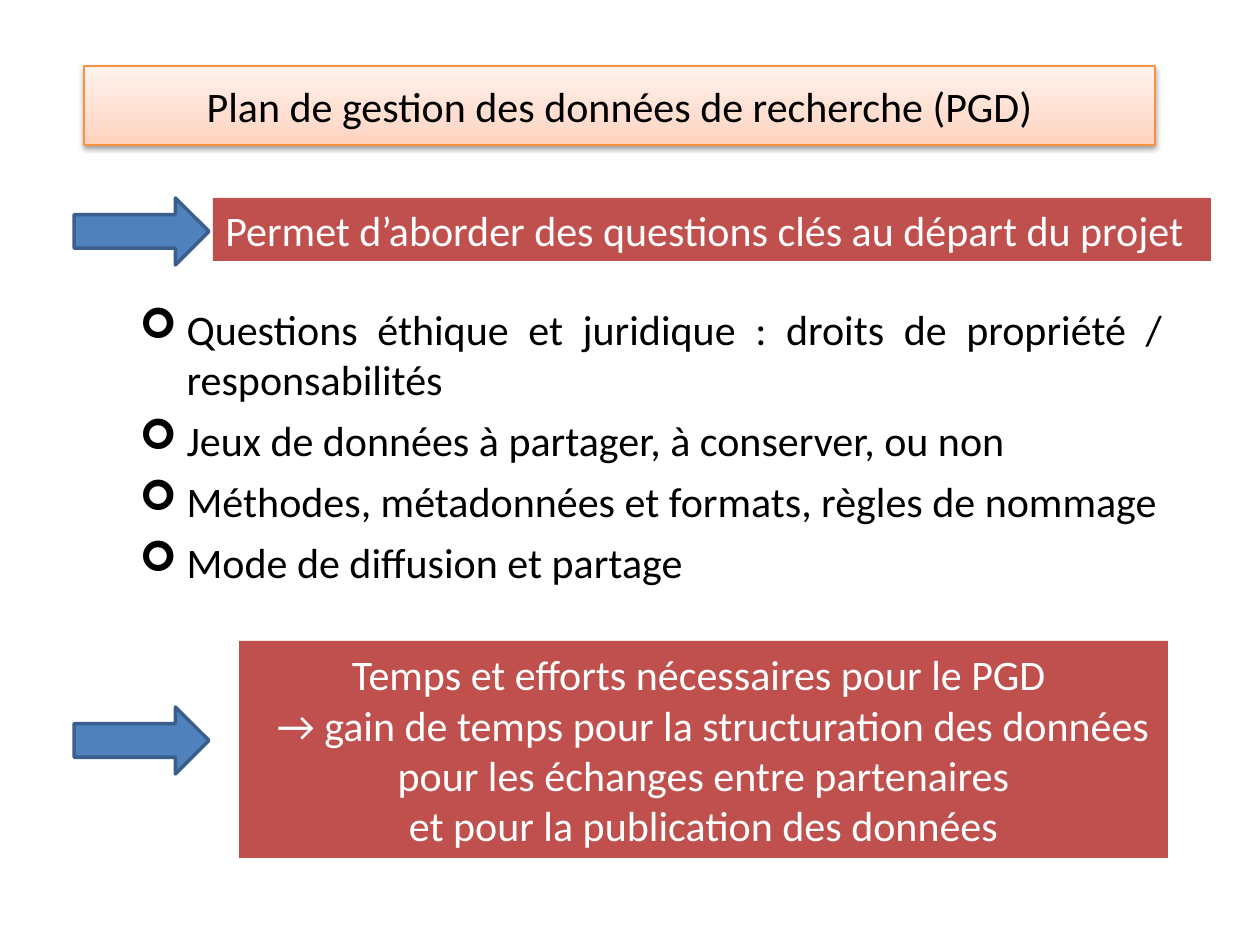
import copy
from dataclasses import dataclass

import pptx
import pptx.dml.color
import pptx.enum.dml
import pptx.enum.shapes
import pptx.enum.text
import pptx.oxml
import pptx.oxml.ns
import pptx.util

ALIGN = pptx.enum.text.PP_ALIGN
SHAPE = pptx.enum.shapes.MSO_SHAPE
qn = pptx.oxml.ns.qn
NAMESPACE = pptx.oxml.ns.nsdecls("a")


@dataclass(frozen=True)
class Theme:
    font: str = "Calibri"
    size: int = 24
    dark: str = "000000"
    light: str = "FFFFFF"
    banner: str = "C0504D"
    arrow: str = "4F81BD"
    arrow_edge: str = "3A5F8C"
    title_edge: str = "F69240"
    title_stops: tuple = ((0, "FFD2BD"), (0.35, "FFDED0"), (1, "FFF2ED"))


def px(length):
    return pptx.util.Emu(round(length * 914400 / 126))


def rgb(value):
    return pptx.dml.color.RGBColor.from_string(value)


def write(paragraph, text, *, font, size, color, align, before=0, margin=0, indent=0, bullet=None):
    run = paragraph.add_run()
    run.text = text
    run.font.name = font
    run.font.size = pptx.util.Pt(size)
    run.font.color.rgb = rgb(color)
    paragraph.alignment = align
    paragraph.space_before = pptx.util.Pt(before)
    properties = paragraph._p.get_or_add_pPr()
    properties.set("marL", str(px(margin)))
    properties.set("indent", str(px(indent)))
    if bullet:
        properties.append(pptx.oxml.parse_xml(f'<a:buFont {NAMESPACE} typeface="Wingdings"/>'))
        properties.append(pptx.oxml.parse_xml(f'<a:buChar {NAMESPACE} char="{bullet}"/>'))


class SlideBuilder:
    def __init__(self, slide, theme):
        self.slide = slide
        self.theme = theme

    def place(self, element, box):
        element.left, element.top, element.width, element.height = map(px, box)

    def fill_text(self, element, lines, color, align, margins=None, **layout):
        frame = element.text_frame
        frame.word_wrap = True
        frame.auto_size = pptx.enum.text.MSO_AUTO_SIZE.NONE
        for index, line in enumerate(lines):
            paragraph = frame.add_paragraph() if index else frame.paragraphs[0]
            if margins:
                layout["margin"] = margins[index]
            write(paragraph, line, font=self.theme.font, size=self.theme.size,
                  color=color, align=align, **layout)

    def title(self, text, box):
        heading = self.slide.shapes.title
        self.place(heading, box)
        heading.fill.gradient()
        heading.fill.gradient_angle = 90
        stop_list = heading.element.spPr.find(".//" + qn("a:gsLst"))
        stop_list.insert(1, copy.deepcopy(stop_list[0]))
        for stop, (position, color) in zip(heading.fill.gradient_stops, self.theme.title_stops):
            stop.position = position
            stop.color.rgb = rgb(color)
        heading.line.color.rgb = rgb(self.theme.title_edge)
        heading.line.width = pptx.util.Pt(0.75)
        heading.element.spPr.append(pptx.oxml.parse_xml(
            f'<a:effectLst {NAMESPACE}><a:outerShdw blurRad="39370" dist="20320" dir="5400000" '
            'rotWithShape="0"><a:srgbClr val="000000"><a:alpha val="38000"/></a:srgbClr>'
            '</a:outerShdw></a:effectLst>'))
        heading.text_frame.vertical_anchor = pptx.enum.text.MSO_ANCHOR.MIDDLE
        self.fill_text(heading, [text], self.theme.dark, ALIGN.CENTER)

    def bullets(self, lines, box):
        topics = self.slide.placeholders[1]
        self.place(topics, box)
        self.fill_text(topics, lines, self.theme.dark, ALIGN.JUSTIFY,
                       before=6, margin=110, indent=-47, bullet="➢")
        for paragraph in topics.text_frame.paragraphs:
            paragraph.level = 1

    def shape(self, kind, box, color):
        figure = self.slide.shapes.add_shape(kind, *map(px, box))
        figure.shadow.inherit = False
        figure.fill.solid()
        figure.fill.fore_color.rgb = rgb(color)
        figure.line.fill.background()
        return figure

    def banner(self, lines, box, align, margins=None):
        message = self.shape(SHAPE.RECTANGLE, box, self.theme.banner)
        self.fill_text(message, lines, self.theme.light, align, margins)

    def arrow(self, top):
        pointer = self.shape(SHAPE.RIGHT_ARROW, (74, top, 135, 67), self.theme.arrow)
        pointer.line.color.rgb = rgb(self.theme.arrow_edge)
        pointer.line.width = pptx.util.Pt(2)


def main():
    deck = pptx.Presentation()
    deck.slide_width, deck.slide_height = px(1260), px(945)
    builder = SlideBuilder(deck.slides.add_slide(deck.slide_layouts[1]), Theme())

    builder.title("Plan de gestion des données de recherche (PGD)", (84, 66, 1071, 79))
    builder.bullets([
        "Questions éthique et juridique : droits de propriété / responsabilités",
        "Jeux de données à partager, à conserver, ou non",
        "Méthodes, métadonnées et formats, règles de nommage",
        "Mode de diffusion et partage",
    ], (64, 297, 1111, 299))
    builder.banner([
        "Temps et efforts nécessaires pour le PGD ",
        "→ gain de temps pour la structuration des données",
        "pour les échanges entre partenaires",
        "et pour la publication des données",
    ], (239, 641, 929, 217), ALIGN.CENTER, margins=(0, 19, 0, 0))
    builder.banner(["Permet d’aborder des questions clés au départ du projet"],
                   (213, 198, 998, 63), ALIGN.LEFT)
    for top in (707, 198):
        builder.arrow(top)

    deck.save("out.pptx")


if __name__ == "__main__":
    main()
